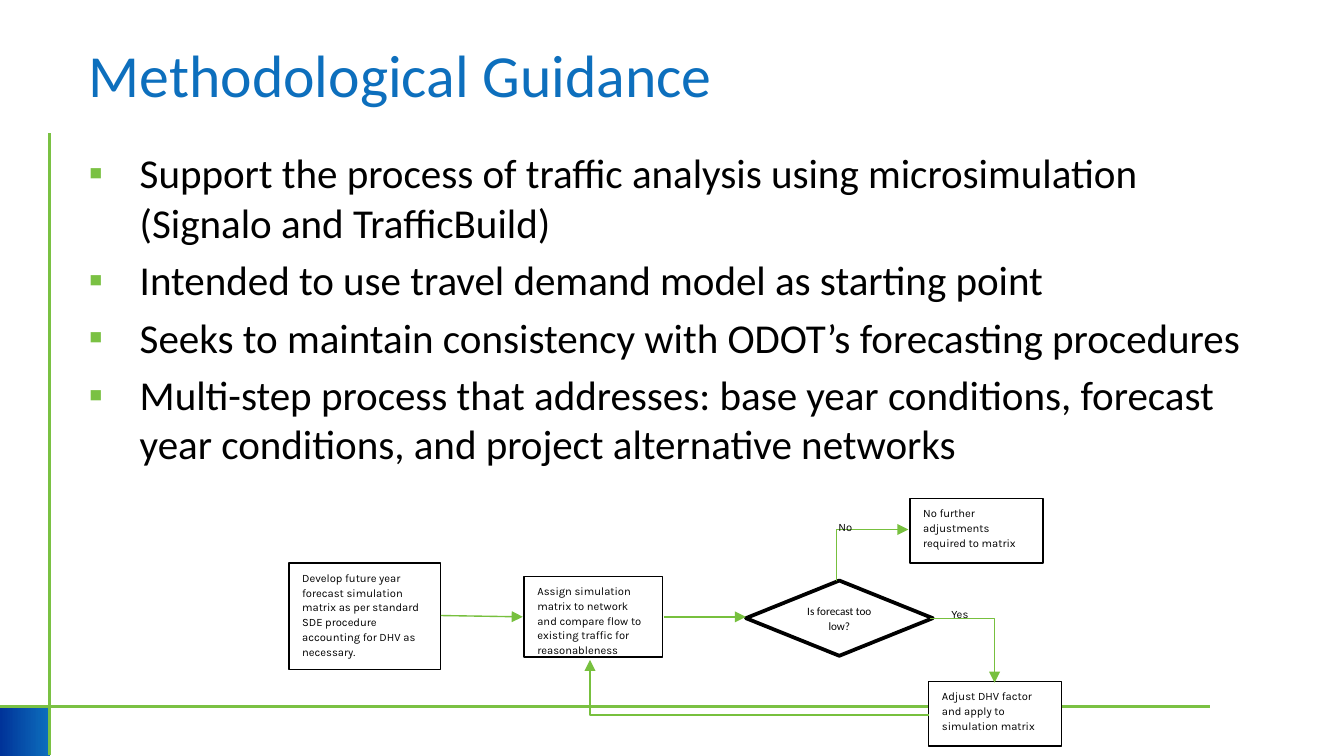
import pptx
import pptx.util
import pptx.dml.color
import pptx.enum.shapes
import pptx.enum.text
import pptx.oxml
import pptx.oxml.ns
from lxml import etree

Inches, Pt = pptx.util.Inches, pptx.util.Pt
RGBColor = pptx.dml.color.RGBColor
SHAPE = pptx.enum.shapes.MSO_SHAPE
CONNECTOR = pptx.enum.shapes.MSO_CONNECTOR
ANCHOR = pptx.enum.text.MSO_ANCHOR
ALIGN = pptx.enum.text.PP_ALIGN
qn = pptx.oxml.ns.qn

BLUE = RGBColor(0x0D, 0x6F, 0xBD)
NAVY = RGBColor(0x00, 0x33, 0x99)
GREEN = RGBColor(0x7A, 0xC1, 0x43)
ARROW_GREEN = RGBColor(0x77, 0xC0, 0x3E)
BLACK = RGBColor(0, 0, 0)
WHITE = RGBColor(0xFF, 0xFF, 0xFF)


def write_step(shape, text, font="Karla", align=ALIGN.LEFT, anchor=ANCHOR.TOP):
    frame = shape.text_frame
    frame.word_wrap = True
    frame.vertical_anchor = anchor
    frame.text = text
    paragraph = frame.paragraphs[0]
    paragraph.alignment = align
    paragraph.line_spacing = 1.1
    paragraph.space_after = Pt(10)
    run_font = paragraph.runs[0].font
    run_font.name, run_font.size, run_font.color.rgb = font, Pt(6), BLACK


def draw_line(shapes, kind, start, end, color, width):
    line = shapes.add_connector(kind, *map(Inches, start + end))
    line.line.color.rgb = color
    line.line.width = Pt(width)
    etree.SubElement(line._element.spPr, qn("a:effectLst"))
    return line


# Widescreen slide, 16:9
presentation = pptx.Presentation()
presentation.slide_width = Inches(10)
presentation.slide_height = Inches(10) * 9 // 16
slide = presentation.slides.add_slide(presentation.slide_layouts[1])

# Corner block and green frame lines
corner = slide.shapes.add_shape(SHAPE.RECTANGLE, 0, Inches(5.26), Inches(0.37), Inches(0.37))
corner.shadow.inherit = False
corner.line.fill.background()
corner.fill.gradient()
corner.fill.gradient_angle = 0
for stop, color in zip(corner.fill.gradient_stops, (NAVY, BLUE)):
    stop.color.rgb = color
draw_line(slide.shapes, CONNECTOR.STRAIGHT, (0, 5.26), (9, 5.26), GREEN, 1.5)
draw_line(slide.shapes, CONNECTOR.STRAIGHT, (0.37, 5.62), (0.37, 0.99), GREEN, 1.5)

# Title
title = slide.shapes.title
title.left, title.top, title.width, title.height = map(Inches, (0.56, 0.29, 8.94, 0.52))
title.text_frame.text = "Methodological Guidance"
title.text_frame.auto_size = pptx.enum.text.MSO_AUTO_SIZE.NONE
title.text_frame.vertical_anchor = ANCHOR.MIDDLE
heading = title.text_frame.paragraphs[0]
heading.alignment = ALIGN.LEFT
heading_font = heading.runs[0].font
heading_font.name, heading_font.size, heading_font.color.rgb = "Calibri", Pt(32), BLUE

# Guidance list
guidance = slide.placeholders[1]
guidance.left, guidance.top, guidance.width, guidance.height = map(Inches, (0.56, 1.05, 8.94, 3.98))
guidance.text_frame.text = "\n".join([
    "Support the process of traffic analysis using microsimulation (Signalo and TrafficBuild)",
    "Intended to use travel demand model as starting point",
    "Seeks to maintain consistency with ODOT’s forecasting procedures",
    "Multi-step process that addresses: base year conditions, forecast year conditions, "
    "and project alternative networks",
])
guidance.text_frame.auto_size = pptx.enum.text.MSO_AUTO_SIZE.NONE
for paragraph in guidance.text_frame.paragraphs:
    paragraph.space_before = Pt(4.4)
    item_font = paragraph.runs[0].font
    item_font.name, item_font.size, item_font.color.rgb = "Calibri", Pt(22), BLACK
    properties = paragraph._p.get_or_add_pPr()
    properties.set("marL", str(Inches(0.38)))
    properties.set("indent", str(Inches(-0.38)))
    bullet_color = etree.SubElement(properties, qn("a:buClr"))
    etree.SubElement(bullet_color, qn("a:srgbClr"), val=str(GREEN))
    etree.SubElement(properties, qn("a:buFont"), typeface="Arial")
    etree.SubElement(properties, qn("a:buChar"), char="▪")

# Flowchart steps
flowchart = slide.shapes.add_group_shape().shapes
for box, text in [
    ((2.15, 4.19, 1.13, 0.79), "Develop future year forecast simulation matrix as per standard "
                               "SDE procedure accounting for DHV as necessary."),
    ((3.9, 4.29, 1.03, 0.6), "Assign simulation matrix to network and compare flow to "
                             "existing traffic for reasonableness"),
    ((6.77, 3.71, 0.99, 0.48), "No further adjustments required to matrix"),
    ((6.91, 5.07, 0.99, 0.48), "Adjust DHV factor and apply to simulation matrix"),
]:
    step = flowchart.add_shape(SHAPE.RECTANGLE, *map(Inches, box))
    step.shadow.inherit = False
    step.fill.solid()
    step.fill.fore_color.rgb = WHITE
    step.line.color.rgb = BLACK
    step.line.width = Pt(0.75)
    write_step(step, text)

# Decision
decision = flowchart.add_shape(SHAPE.FLOWCHART_DECISION, *map(Inches, (5.55, 4.32, 1.39, 0.56)))
decision.shadow.inherit = False
decision.fill.background()
decision.line.color.rgb = BLACK
decision.line.width = Pt(2)
write_step(decision, "Is forecast too low?", "Calibri", ALIGN.CENTER, ANCHOR.MIDDLE)

# Arrows; a bend is the position of the vertical leg, in 1/100000 of the width
for start, end, bend in [
    ((3.28, 4.58), (3.89, 4.59), None),
    ((4.94, 4.59), (5.55, 4.59), None),
    ((6.23, 4.32), (6.76, 3.94), -1300),
    ((6.92, 4.6), (7.4, 5.08), 100000),
    ((6.91, 5.32), (4.39, 4.91), 100000),
]:
    kind = CONNECTOR.STRAIGHT if bend is None else CONNECTOR.ELBOW
    arrow = draw_line(flowchart, kind, start, end, ARROW_GREEN, 0.75)
    etree.SubElement(arrow.line._get_or_add_ln(), qn("a:tailEnd"), type="triangle")
    if bend is not None:
        geometry = arrow._element.spPr.find(qn("a:prstGeom"))
        adjustments = geometry.find(qn("a:avLst"))
        if adjustments is None:
            adjustments = etree.SubElement(geometry, qn("a:avLst"))
        etree.SubElement(adjustments, qn("a:gd"), name="adj1", fmla=f"val {bend}")

# Branch labels
for box, text in [((6.14, 3.81, 0.32, 0.17), "No"), ((6.98, 4.46, 0.38, 0.17), "Yes")]:
    write_step(flowchart.add_textbox(*map(Inches, box)), text)

presentation.save("out.pptx")
